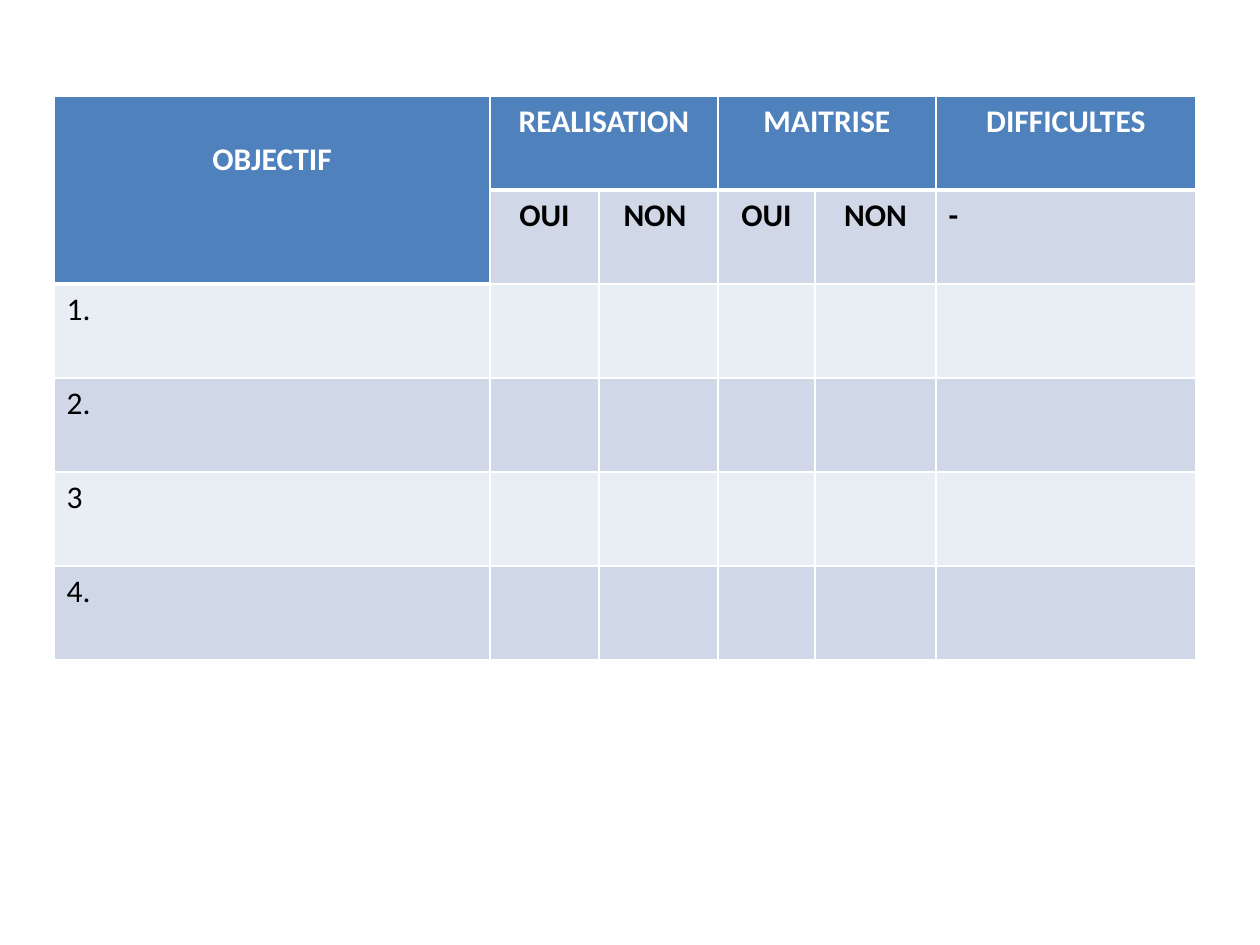
from lxml.etree import SubElement
from pptx import Presentation
from pptx.dml.color import RGBColor
from pptx.enum.text import PP_ALIGN as Align
from pptx.oxml.ns import qn
from pptx.util import Emu, Pt

# Content: (row, column, text)
HEADINGS = [(0, 0, "OBJECTIF"), (0, 1, "REALISATION"), (0, 3, "MAITRISE"),
            (0, 5, "DIFFICULTES")]
ANSWERS = [(1, 1, "OUI"), (1, 2, "NON "), (1, 3, "OUI"), (1, 4, "NON")]
REMARKS = [(1, 5, "-")]
GOALS = [(row, 0, label) for row, label in enumerate(["1.", "2.", "3", "4."], 2)]
MERGES = [((0, 0), (1, 0)), ((0, 1), (0, 2)), ((0, 3), (0, 4))]

# Layout in px
PX = 914400 / 126
PAGE = (1260, 945)
ORIGIN = (54, 96)
COLUMNS = [436, 109, 119, 97, 121, 260]
ROWS = [94] * 6
GOAL_HEADING_TOP = 45

THEME = {
    "font": "Calibri", "size": 18,
    "header": "4F81BD", "bands": ["E9EDF4", "D0D8E8"],
    "line": "FFFFFF", "thin": 1, "thick": 3,
}
HEADING_FORMAT = {"bold": True, "color": "FFFFFF", "align": Align.CENTER}
ANSWER_FORMAT = {"bold": True, "color": "000000", "align": Align.CENTER}
REMARK_FORMAT = {"bold": True, "color": "000000", "align": Align.LEFT}
GOAL_FORMAT = {"bold": False, "color": "000000", "align": Align.LEFT}


def px(length):
    return Emu(round(length * PX))


def add_borders(cell, weights):
    properties = cell._tc.get_or_add_tcPr()
    for side, weight in weights.items():
        line = SubElement(properties, qn(f"a:ln{side}"), w=str(Pt(weight)))
        fill = SubElement(line, qn("a:solidFill"))
        SubElement(fill, qn("a:srgbClr"), val=THEME["line"])


def style_cell(cell, row, column):
    header_rows = 2 if column == 0 else 1
    in_header = row < header_rows
    thin, thick = THEME["thin"], THEME["thick"]
    add_borders(cell, {
        "L": thin, "R": thin,
        "T": thick if row == header_rows else thin,
        "B": thick if in_header else thin,
    })
    color = THEME["header"] if in_header else THEME["bands"][row % 2]
    cell.fill.solid()
    cell.fill.fore_color.rgb = RGBColor.from_string(color)


def write_cell(cell, text, style):
    para = cell.text_frame.paragraphs[0]
    para.alignment = style["align"]
    span = para.add_run()
    span.text = text
    font_values = {"name": THEME["font"], "size": Pt(THEME["size"]),
                   "bold": style["bold"]}
    for name, value in font_values.items():
        setattr(span.font, name, value)
    span.font.color.rgb = RGBColor.from_string(style["color"])


def main():
    deck = Presentation()
    deck.slide_width, deck.slide_height = map(px, PAGE)
    page = deck.slides.add_slide(deck.slide_layouts[6])

    # Grid
    area = map(px, (*ORIGIN, sum(COLUMNS), sum(ROWS)))
    table = page.shapes.add_table(len(ROWS), len(COLUMNS), *area).table
    table.horz_banding = False
    for column, width in zip(table.columns, COLUMNS):
        column.width = px(width)
    for row, height in zip(table.rows, ROWS):
        row.height = px(height)

    # Fills and borders
    for row in range(len(ROWS)):
        for column in range(len(COLUMNS)):
            style_cell(table.cell(row, column), row, column)
    for first, last in MERGES:
        table.cell(*first).merge(table.cell(*last))

    # Wording
    groups = [(HEADINGS, HEADING_FORMAT), (ANSWERS, ANSWER_FORMAT),
              (REMARKS, REMARK_FORMAT), (GOALS, GOAL_FORMAT)]
    for entries, style in groups:
        for row, column, text in entries:
            write_cell(table.cell(row, column), text, style)
    table.cell(0, 0).margin_top = px(GOAL_HEADING_TOP)

    deck.save("out.pptx")


if __name__ == "__main__":
    main()
